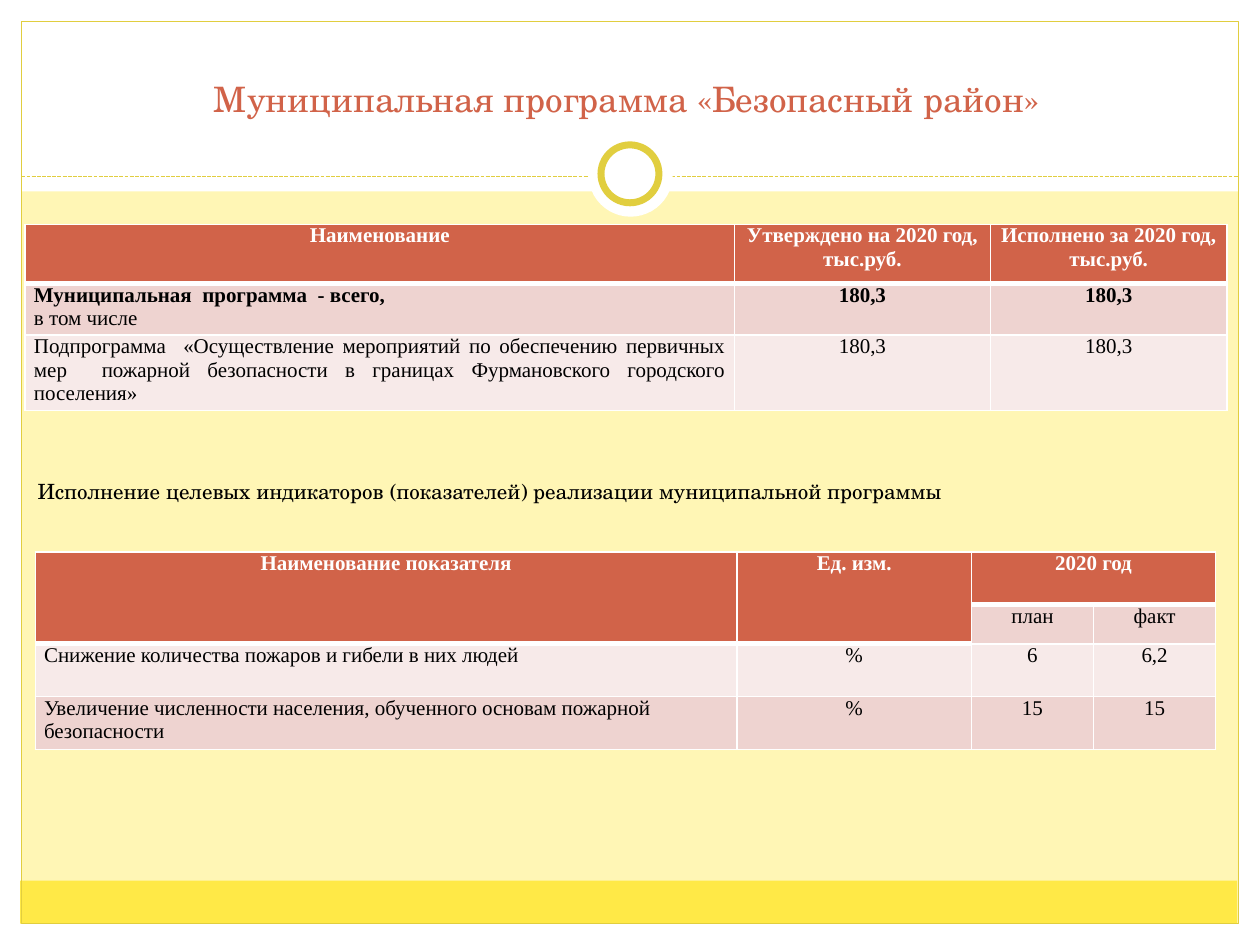
from lxml import etree
from pptx import Presentation
from pptx.dml.color import RGBColor
from pptx.enum import dml, shapes, text
from pptx.oxml import ns
from pptx.util import Inches, Pt

COLORS = {
    "background": "FFF6B5", "white": "FFFFFF", "black": "000000",
    "footer": "FFE947", "gold": "E1CE3F", "accent": "D16349",
    "band_dark": "EED3D0", "band_light": "F7EAE9",
}
TITLE_FONT, TABLE_FONT = "TeX Gyre Schola", "Times New Roman"
ALIGN = text.PP_ALIGN


def color(name):
    return RGBColor.from_string(COLORS[name])


def set_borders(cell, top, bottom):
    """Give the cell white borders; must run before the cell fill is set."""
    properties = cell._tc.get_or_add_tcPr()
    for side, points in (("L", 1), ("R", 1), ("T", top), ("B", bottom)):
        line = etree.SubElement(properties, ns.qn(f"a:ln{side}"), w=str(Pt(points)))
        fill = etree.SubElement(line, ns.qn("a:solidFill"))
        etree.SubElement(fill, ns.qn("a:srgbClr"), val=COLORS["white"])


presentation = Presentation()
presentation.slide_width, presentation.slide_height = Inches(10), Inches(7.5)
slide = presentation.slides.add_slide(presentation.slide_layouts[5])
slide.background.fill.solid()
slide.background.fill.fore_color.rgb = color("background")

# Page frame: kind, left, top, width, height, fill, line, line width
RECTANGLE, OVAL = shapes.MSO_SHAPE.RECTANGLE, shapes.MSO_SHAPE.OVAL
frame_parts = [
    (RECTANGLE, 0, 7.33, 10, 0.17, "white", None, 0),
    (RECTANGLE, 0, 0, 10, 1.52, "white", None, 0),
    (RECTANGLE, 0, 0, 0.17, 7.5, "white", None, 0),
    (RECTANGLE, 9.83, 0, 0.17, 7.5, "white", None, 0),
    (RECTANGLE, 0.16, 6.99, 9.66, 0.34, "footer", None, 0),
    (RECTANGLE, 0.17, 0.17, 9.66, 7.16, None, "gold", 0.75),
    ("divider", 0.17, 1.4, 9.66, 0, None, "gold", 0.75),
    (OVAL, 4.67, 1.05, 0.67, 0.67, "white", None, 0),
    (OVAL, 4.77, 1.15, 0.46, 0.46, "white", "gold", 4),
]
for kind, left, top, width, height, fill, line, line_width in frame_parts:
    if kind == "divider":
        shape = slide.shapes.add_connector(
            shapes.MSO_CONNECTOR.STRAIGHT,
            Inches(left), Inches(top), Inches(left + width), Inches(top))
        shape.line.dash_style = dml.MSO_LINE.SQUARE_DOT
        etree.SubElement(shape.element.spPr, ns.qn("a:effectLst"))
    else:
        shape = slide.shapes.add_shape(
            kind, Inches(left), Inches(top), Inches(width), Inches(height))
        shape.shadow.inherit = False
        if fill:
            shape.fill.solid()
            shape.fill.fore_color.rgb = color(fill)
        else:
            shape.fill.background()
    if line:
        shape.line.color.rgb = color(line)
        shape.line.width = Pt(line_width)
    else:
        shape.line.fill.background()

# Title, brought in front of the frame
title = slide.shapes.title
slide.shapes.element.append(title.element)
title.left, title.top = Inches(0.31), Inches(0.47)
title.width, title.height = Inches(9.33), Inches(0.53)
title.text_frame.text = "Муниципальная программа «Безопасный район»"
title.text_frame.vertical_anchor = text.MSO_ANCHOR.BOTTOM

subtitle = slide.shapes.add_textbox(Inches(0.2), Inches(3.75), Inches(9.3), Inches(0.39))
subtitle.text_frame.word_wrap = True
subtitle.text_frame.text = (
    "Исполнение целевых индикаторов (показателей) реализации муниципальной программы")

for box, size, name, alignment in (
    (title, 20, "accent", ALIGN.CENTER),
    (subtitle, 12, "black", ALIGN.LEFT),
):
    paragraph = box.text_frame.paragraphs[0]
    paragraph.alignment = alignment
    paragraph.font.name, paragraph.font.size = TITLE_FONT, Pt(size)
    paragraph.font.color.rgb = color(name)

# header_depth is the number of header rows in each column
tables = [
    {
        "position": (0.2, 1.78),
        "columns": [5.63, 2.03, 1.88],
        "rows": [0.47, 0.41, 0.56],
        "header_depth": [1, 1, 1],
        "merges": [],
        "name_alignment": ALIGN.JUSTIFY,
        "bold_row": 1,
        "cells": [
            ["Наименование", "Утверждено на 2020 год, тыс.руб.",
             "Исполнено за 2020 год, тыс.руб."],
            ["Муниципальная  программа  - всего,\nв том числе", "180,3", "180,3"],
            ["Подпрограмма  «Осуществление мероприятий по обеспечению первичных "
             "мер  пожарной безопасности в границах Фурмановского городского "
             "поселения»", "180,3", "180,3"],
        ],
    },
    {
        "position": (0.28, 4.38),
        "columns": [5.57, 1.86, 0.97, 0.97],
        "rows": [0.42, 0.31, 0.42, 0.42],
        "header_depth": [2, 2, 1, 1],
        "merges": [((0, 0), (1, 0)), ((0, 1), (1, 1)), ((0, 2), (0, 3))],
        "name_alignment": ALIGN.LEFT,
        "bold_row": None,
        "cells": [
            ["Наименование показателя", "Ед. изм.", "2020 год", ""],
            ["", "", "план", "факт"],
            ["Снижение количества пожаров и гибели в них людей", "%", "6", "6,2"],
            ["Увеличение численности населения, обученного основам пожарной "
             "безопасности", "%", "15", "15"],
        ],
    },
]

for data in tables:
    left, top = data["position"]
    table = slide.shapes.add_table(
        len(data["rows"]), len(data["columns"]), Inches(left), Inches(top),
        Inches(sum(data["columns"])), Inches(sum(data["rows"]))).table
    for column, width in zip(table.columns, data["columns"]):
        column.width = Inches(width)
    for row, height in zip(table.rows, data["rows"]):
        row.height = Inches(height)

    for i, row_texts in enumerate(data["cells"]):
        for j, cell_text in enumerate(row_texts):
            cell = table.cell(i, j)
            depth = data["header_depth"][j]
            is_header = i < depth
            set_borders(cell, top=3 if i == depth else 1, bottom=3 if i == depth - 1 else 1)
            cell.fill.solid()
            band = "band_dark" if i % 2 else "band_light"
            cell.fill.fore_color.rgb = color("accent" if is_header else band)
            cell.margin_left = cell.margin_right = Inches(0.07)
            cell.margin_top = cell.margin_bottom = 0
            cell.text = cell_text
            for k, paragraph in enumerate(cell.text_frame.paragraphs):
                is_name = j == 0 and not is_header
                paragraph.alignment = data["name_alignment"] if is_name else ALIGN.CENTER
                paragraph.font.name, paragraph.font.size = TABLE_FONT, Pt(12)
                paragraph.font.bold = is_header or (i == data["bold_row"] and k == 0)
                paragraph.font.color.rgb = color("white" if is_header else "black")

    for first, last in data["merges"]:
        table.cell(*first).merge(table.cell(*last))

presentation.save("out.pptx")
